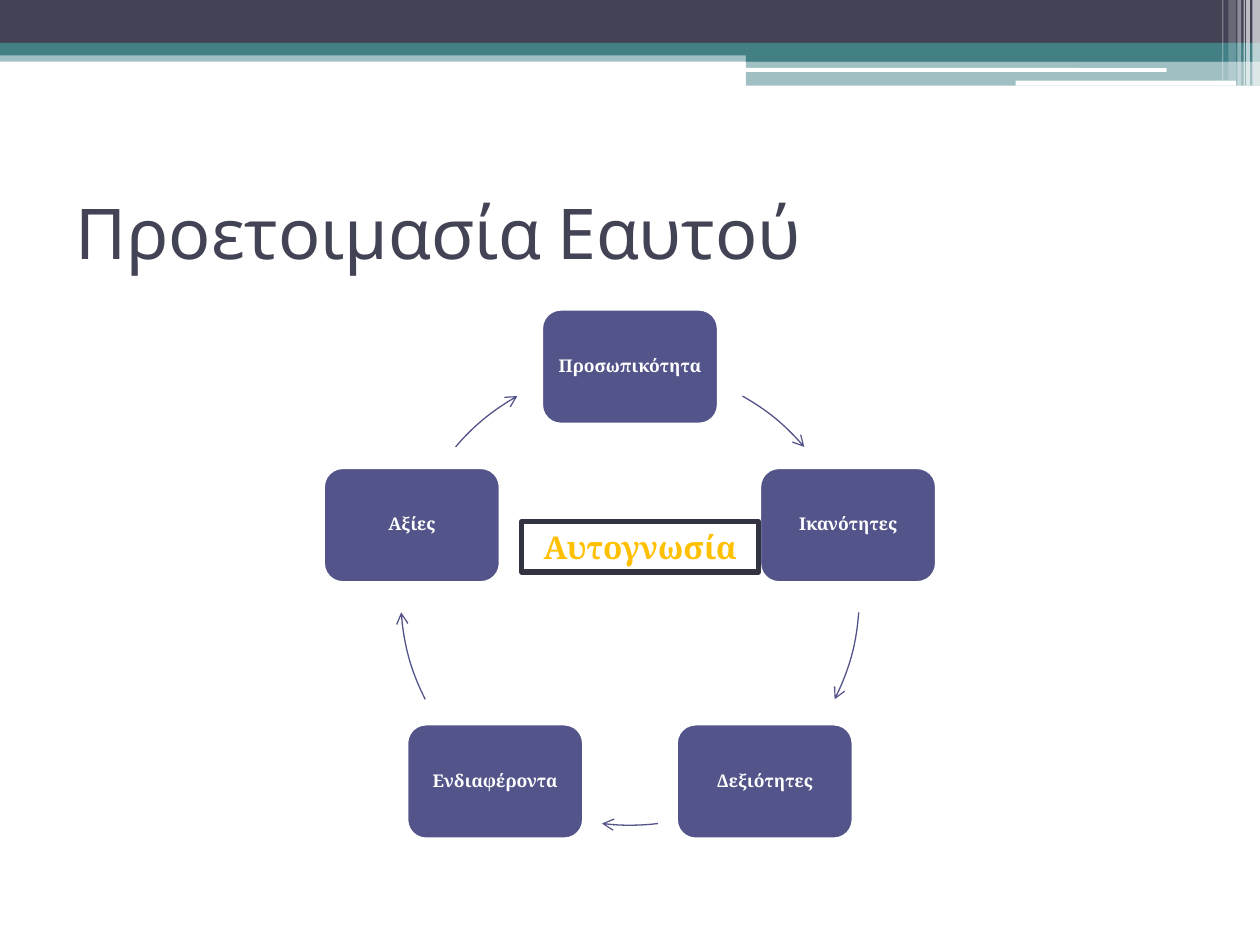
from dataclasses import dataclass
from math import cos, radians, sin
from typing import NamedTuple

from pptx import Presentation
from pptx.dml.color import RGBColor as RGB
from pptx.enum.shapes import MSO_SHAPE as SHAPE
from pptx.enum.text import MSO_ANCHOR as ANCHOR, PP_ALIGN as ALIGN
from pptx.oxml.ns import qn
from pptx.util import Inches, Pt
from lxml.etree import SubElement

COLS, ROWS = 100, 75
CELL = Inches(10) // COLS


@dataclass(frozen=True)
class Theme:
    dark: str = "424456"
    teal: str = "438086"
    white: str = "FFFFFF"
    node: str = "53548A"
    frame: str = "323341"
    gold: str = "FFC000"
    heading: str = "Cabin"
    body: str = "Cambria"
    title_size: float = 40
    core_size: float = 18
    node_size: float = 10


class Box(NamedTuple):
    col: float
    row: float
    cols: float
    rows: float

    def emu(self) -> list[int]:
        return [round(v * CELL) for v in self]


class Band(NamedTuple):
    box: Box
    color: str
    opacity: int = 100
    shape: SHAPE = SHAPE.RECTANGLE


class Node(NamedTuple):
    label: str
    arc_start: float
    arc_end: float


T = Theme()
CENTER_COL, CENTER_ROW, RADIUS = 50, 47.3, 18.2
NODE_COLS, NODE_ROWS = 14, 9.1
TITLE = Box(5, 12.5, 90, 11.7)
CORE = Box(41.4, 41.4, 18.8, 4)

BANDS = [
    Band(Box(0, 4, COLS, 0.9), T.teal, 50),
    Band(Box(0, 0, COLS, 3.4), T.dark),
    Band(Box(0, 3.4, COLS, 1), T.teal),
    Band(Box(59.2, 3.9, 40.8, 1), T.teal),
    Band(Box(59.2, 4.8, 40.8, 2), T.teal, 50),
    Band(Box(59.1, 5.4, 33.5, 0.3), T.white, shape=SHAPE.ROUNDED_RECTANGLE),
    Band(Box(80.6, 6.4, 17.5, 0.4), T.white, shape=SHAPE.ROUNDED_RECTANGLE),
    Band(Box(99.4, 0, 0.6, 6.8), T.white, 65),
    Band(Box(98.9, 0, 0.3, 6.8), T.white, 65),
    Band(Box(98.7, 0, 0.1, 6.8), T.white, 60),
    Band(Box(98.2, 0, 0.3, 6.8), T.white, 40),
    Band(Box(97.5, 0, 0.6, 6.4), T.white, 20),
    Band(Box(97, 0, 0.1, 6.4), T.white, 30),
]

NODES = [
    Node("Προσωπικότητα", 299.4, 319.5),
    Node("Ικανότητες", 4.1, 26.8),
    Node("Δεξιότητες", 83, 97),
    Node("Ενδιαφέροντα", 153.2, 175.9),
    Node("Αξίες", 220.5, 240.6),
]


def add_box(s, shape: SHAPE, box: Box, fill: str | None = None,
            line: str | None = None, width: float = 1):
    sp = s.shapes.add_shape(shape, *box.emu())
    sp.shadow.inherit = False
    if fill:
        sp.fill.solid()
        sp.fill.fore_color.rgb = RGB.from_string(fill)
    else:
        sp.fill.background()
    if line:
        sp.line.color.rgb = RGB.from_string(line)
        sp.line.width = Pt(width)
    else:
        sp.line.fill.background()
    return sp


def write(sp, text: str, color: str, font: dict, frame: dict, para: dict) -> None:
    tf = sp.text_frame
    p = tf.paragraphs[0]
    r = p.add_run()
    r.text = text
    r.font.color.rgb = RGB.from_string(color)
    for target, values in ((tf, frame), (p, para), (r.font, font)):
        for name, value in values.items():
            setattr(target, name, value)


def draw_band(s, band: Band) -> None:
    sp = add_box(s, band.shape, band.box, band.color)
    if band.opacity < 100:
        clr = sp.fill._xPr.find(qn("a:solidFill"))[0]
        SubElement(clr, qn("a:alpha")).set("val", str(band.opacity * 1000))


def draw_node(s, node: Node, angle: float) -> None:
    col = CENTER_COL + RADIUS * cos(radians(angle)) - NODE_COLS / 2
    row = CENTER_ROW + RADIUS * sin(radians(angle)) - NODE_ROWS / 2
    sp = add_box(s, SHAPE.ROUNDED_RECTANGLE, Box(col, row, NODE_COLS, NODE_ROWS),
                 T.node, T.white, 1.5)
    sides = ("left", "top", "right", "bottom")
    write(sp, node.label, T.white,
          {"name": T.body, "size": Pt(T.node_size), "bold": True},
          {"word_wrap": True, "vertical_anchor": ANCHOR.MIDDLE}
          | {f"margin_{side}": Inches(0.04) for side in sides},
          {"alignment": ALIGN.CENTER, "line_spacing": 0.9})


def draw_arc(s, node: Node) -> None:
    box = Box(CENTER_COL - RADIUS, CENTER_ROW - RADIUS, 2 * RADIUS, 2 * RADIUS)
    sp = add_box(s, SHAPE.ARC, box, line=T.node, width=0.75)
    for i, degrees in enumerate((node.arc_start, node.arc_end)):
        sp.adjustments[i] = degrees * 0.6
    SubElement(sp.line._get_or_add_ln(), qn("a:tailEnd")).set("type", "arrow")


def main() -> None:
    prs = Presentation()
    prs.slide_width, prs.slide_height = COLS * CELL, ROWS * CELL
    s = prs.slides.add_slide(prs.slide_layouts[5])

    for band in BANDS:
        draw_band(s, band)

    title = s.shapes.title
    title.left, title.top, title.width, title.height = TITLE.emu()
    write(title, "Προετοιμασία Εαυτού", T.dark,
          {"name": T.heading, "size": Pt(T.title_size)},
          {"word_wrap": True, "vertical_anchor": ANCHOR.MIDDLE},
          {"alignment": ALIGN.LEFT})

    for i, node in enumerate(NODES):
        draw_node(s, node, -90 + i * 360 / len(NODES))
        draw_arc(s, node)

    core = add_box(s, SHAPE.RECTANGLE, CORE, line=T.frame, width=3)
    write(core, "Αυτογνωσία", T.gold,
          {"name": T.body, "size": Pt(T.core_size), "bold": True},
          {"word_wrap": True, "vertical_anchor": ANCHOR.MIDDLE},
          {"alignment": ALIGN.CENTER})

    prs.save("out.pptx")


if __name__ == "__main__":
    main()
